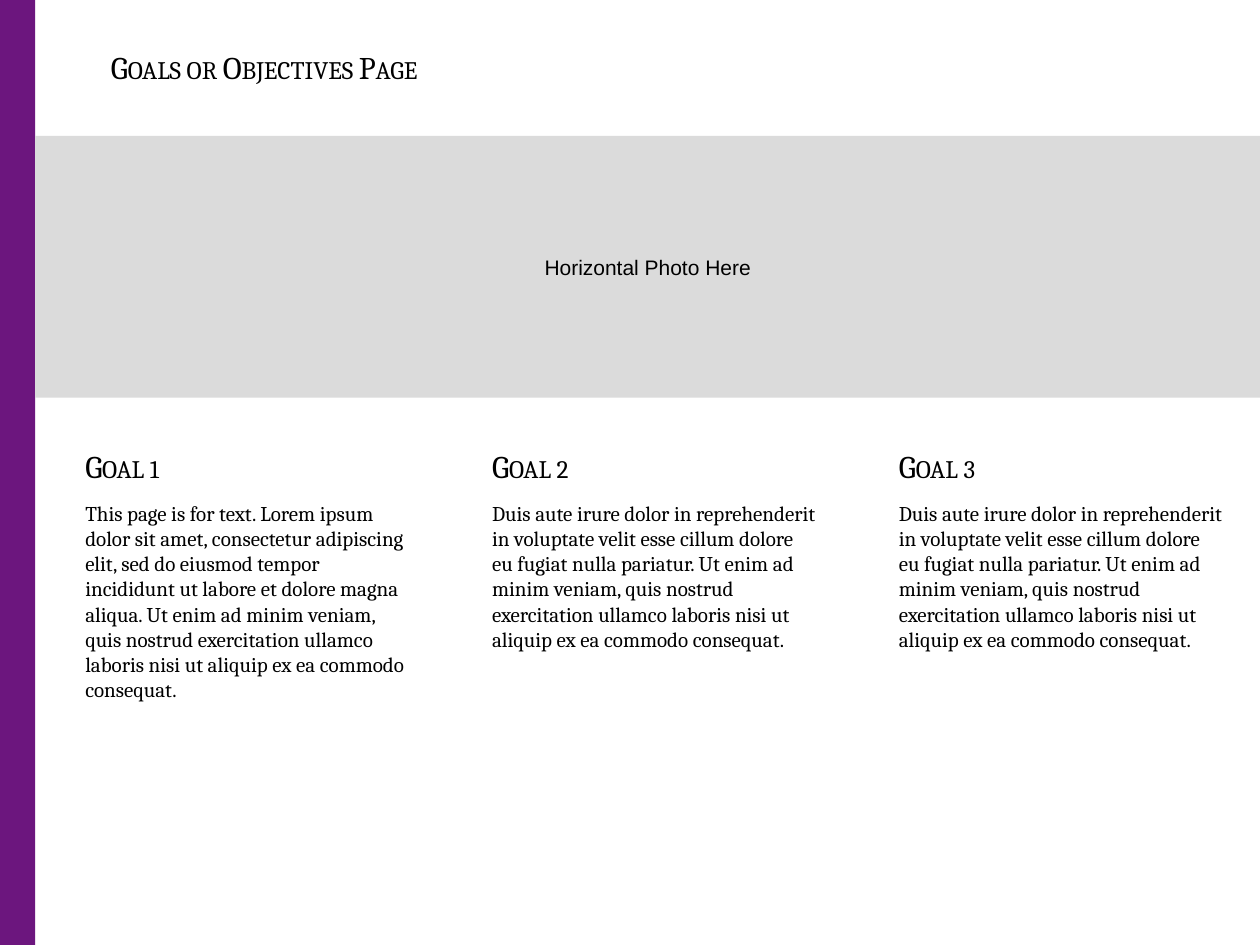
from pptx import Presentation
from pptx.dml.color import RGBColor
from pptx.enum.shapes import MSO_SHAPE
from pptx.enum.text import MSO_ANCHOR, MSO_AUTO_SIZE, PP_ALIGN
from pptx.util import Cm, Pt

RECT = MSO_SHAPE.RECTANGLE
TOP = MSO_ANCHOR.TOP
GROW = MSO_AUTO_SIZE.SHAPE_TO_FIT_TEXT
LEFT, MID = PP_ALIGN.LEFT, PP_ALIGN.CENTER

TITLE = "Goals or Objectives Page"
PHOTO = "Horizontal Photo Here"
DUIS = (
    "Duis aute irure dolor in reprehenderit in voluptate velit esse cillum "
    "dolore eu fugiat nulla pariatur. Ut enim ad minim veniam, quis nostrud "
    "exercitation ullamco laboris nisi ut aliquip ex ea commodo consequat."
)
GOALS = [
    ("Goal 1",
     "This page is for text. Lorem ipsum dolor sit amet, consectetur "
     "adipiscing elit, sed do eiusmod tempor incididunt ut labore et dolore "
     "magna aliqua. Ut enim ad minim veniam, quis nostrud exercitation "
     "ullamco laboris nisi ut aliquip ex ea commodo consequat.", 4.37),
    ("Goal 2", DUIS, 3.84),
    ("Goal 3", DUIS, 3.84),
]

COLORS = {"bar": "6C167E", "photo": "DBDBDB", "text": "000000"}
HEAD = {"name": "Cambria", "size": Pt(18), "bold": False}
BODY = {"name": "Cambria", "size": Pt(12)}
LABEL = {"name": "Arial", "size": Pt(12)}
FRAME = {"word_wrap": True, "auto_size": GROW, "vertical_anchor": TOP}

WIDE, HIGH = 25.4, 19.05
BAR = 0.71
START, STEP, COL = 1.47, 8.2, 7.06


def apply(item, values):
    """Set each named attribute on the item."""
    for name, value in values.items():
        setattr(item, name, value)


def block(slide, color, *area):
    """Add a plain filled rectangle."""
    shape = slide.shapes.add_shape(RECT, *map(Cm, area))
    shape.shadow.inherit = False
    shape.fill.solid()
    shape.fill.fore_color.rgb = RGBColor.from_string(COLORS[color])
    shape.line.fill.background()


def write(shape, text, style, align=LEFT, caps=False):
    """Fill a shape with one styled paragraph."""
    frame = shape.text_frame
    apply(frame, FRAME)
    para = frame.paragraphs[0]
    para.alignment = align
    run = para.add_run()
    run.text = text
    apply(run.font, style)
    run.font.color.rgb = RGBColor.from_string(COLORS["text"])
    if caps:
        run.font._element.set("cap", "small")


def box(slide, area, *words, **extra):
    """Add a text box with styled text."""
    write(slide.shapes.add_textbox(*map(Cm, area)), *words, **extra)


def main():
    """Build the goals slide."""
    deck = Presentation()
    apply(deck, {"slide_width": Cm(WIDE), "slide_height": Cm(HIGH)})
    slide = deck.slides.add_slide(deck.slide_layouts[5])

    block(slide, "bar", 0, 0, BAR, HIGH)
    block(slide, "photo", BAR, 2.74, WIDE - BAR, 5.28)
    box(slide, (8.69, 5, 8.74, 0.76), PHOTO, LABEL, MID)

    title = slide.shapes.title
    apply(title, {"left": Cm(1.98), "top": Cm(0.84),
                  "width": Cm(13.72), "height": Cm(1.02)})
    write(title, TITLE, HEAD, caps=True)

    for spot, (name, text, tall) in enumerate(GOALS):
        left = START + spot * STEP
        box(slide, (left, 8.89, COL, 1.02), name, HEAD, caps=True)
        box(slide, (left, 9.96, COL, tall), text, BODY)

    deck.save("out.pptx")


if __name__ == "__main__":
    main()
